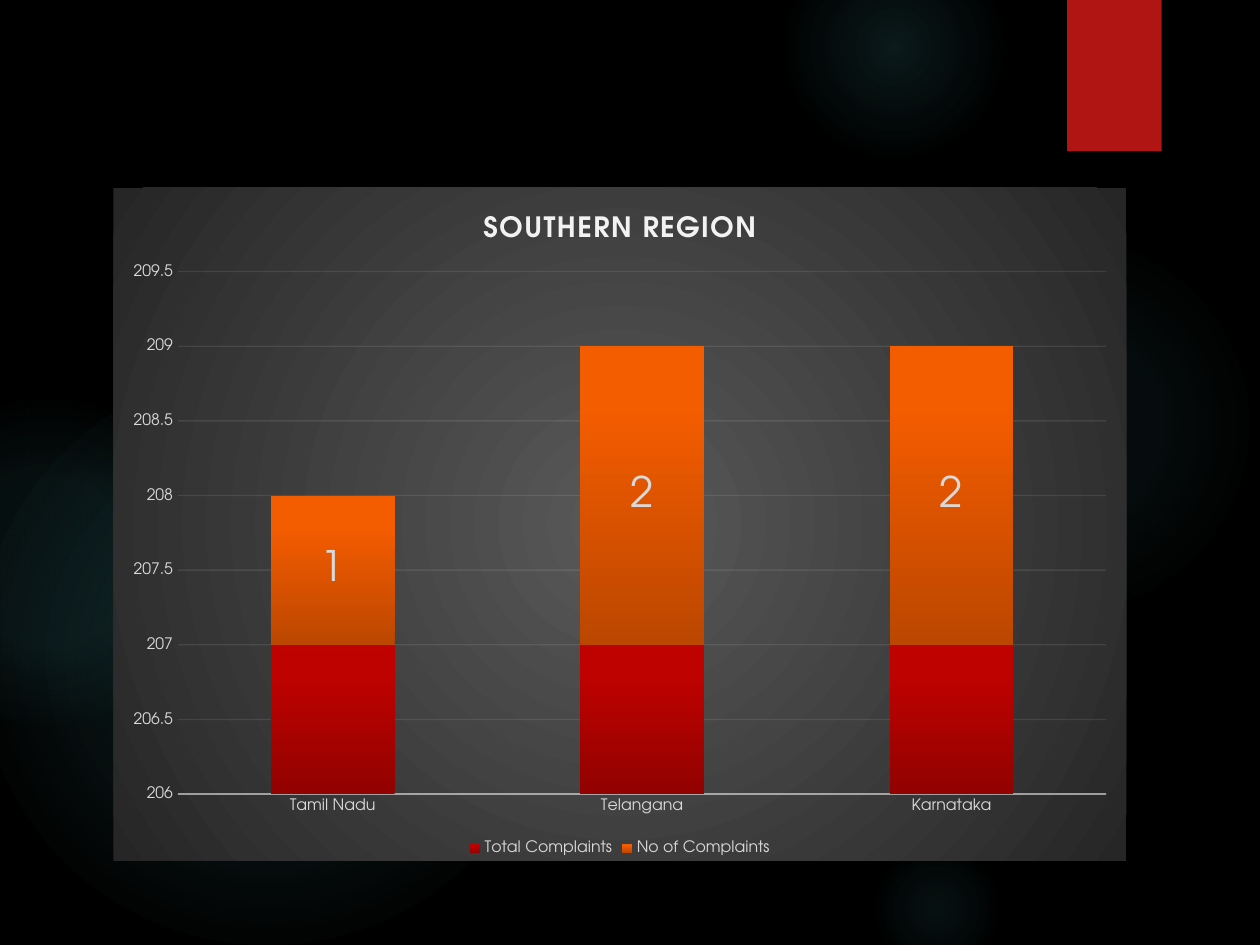
from lxml import etree
from pptx import Presentation
from pptx.chart.data import CategoryChartData
from pptx.dml.color import RGBColor
from pptx.enum.chart import XL_CHART_TYPE, XL_LABEL_POSITION, XL_LEGEND_POSITION, XL_TICK_MARK
from pptx.enum.shapes import MSO_SHAPE
from pptx.oxml.ns import qn
from pptx.util import Inches, Pt

OVAL, RECTANGLE = MSO_SHAPE.OVAL, MSO_SHAPE.RECTANGLE
STACKED = XL_CHART_TYPE.COLUMN_STACKED
BOTTOM = XL_LEGEND_POSITION.BOTTOM
CENTER = XL_LABEL_POSITION.CENTER
NO_TICK = XL_TICK_MARK.NONE

BLACK = RGBColor(0x00, 0x00, 0x00)
WHITE = RGBColor(0xFF, 0xFF, 0xFF)
TEAL = RGBColor(0x50, 0xB9, 0xC1)
RED = RGBColor(0xB0, 0x15, 0x13)
PALE = RGBColor(0xF2, 0xF2, 0xF2)
SILVER = RGBColor(0xD9, 0xD9, 0xD9)
PANEL = [(0, RGBColor(0x59, 0x59, 0x59), 100), (100, RGBColor(0x26, 0x26, 0x26), 100)]
CRIMSON = [(0, RGBColor(0x92, 0x02, 0x00), 100), (80, RGBColor(0xBD, 0x02, 0x00), 100),
           (100, RGBColor(0xBE, 0x02, 0x00), 100)]
ORANGE = [(0, RGBColor(0xBC, 0x47, 0x00), 100), (80, RGBColor(0xF4, 0x5C, 0x00), 100),
          (100, RGBColor(0xF5, 0x5C, 0x00), 100)]


def child(parent, tag, **attributes):
    return etree.SubElement(parent, qn(tag), {key: str(value) for key, value in attributes.items()})


def color(parent, rgb, opacity):
    swatch = child(parent, "a:srgbClr", val=rgb)
    if opacity < 100:
        child(swatch, "a:alpha", val=opacity * 1000)


def gradient(stops, angle=None):
    fill = etree.Element(qn("a:gradFill"), rotWithShape="1")
    stop_list = child(fill, "a:gsLst")
    for position, rgb, opacity in stops:
        color(child(stop_list, "a:gs", pos=position * 1000), rgb, opacity)
    if angle is None:
        circle = child(fill, "a:path", path="circle")
        child(circle, "a:fillToRect", l=50000, t=50000, r=50000, b=50000)
    else:
        child(fill, "a:lin", ang=angle * 60000, scaled=0)
    return fill


class Deck:
    font = "TeX Gyre Adventor"

    def __init__(self, width, height):
        self.presentation = Presentation()
        self.presentation.slide_width = Inches(width)
        self.presentation.slide_height = Inches(height)
        self.slide = self.presentation.slides.add_slide(self.presentation.slide_layouts[6])
        backdrop = self.slide.background.fill
        backdrop.solid()
        backdrop.fore_color.rgb = BLACK

    def style(self, font, size, rgb, bold=False):
        font.name, font.size, font.bold = self.font, Pt(size), bold
        font.color.rgb = rgb

    def shape(self, kind, box, rgb):
        shape = self.slide.shapes.add_shape(kind, *map(Inches, box))
        shape.shadow.inherit = False
        shape.fill.solid()
        shape.fill.fore_color.rgb = rgb
        shape.line.fill.background()
        return shape

    def glow(self, left, top, diameter, opacities, reach):
        orb = self.shape(OVAL, (left, top, diameter, diameter), TEAL)
        stops = [(position, TEAL, opacity) for position, opacity in zip((0, 36, reach), opacities)]
        solid = orb.element.spPr.find(qn("a:solidFill"))
        solid.getparent().replace(solid, gradient(stops))

    def ribbon(self, box):
        ribbon = self.shape(RECTANGLE, box, RED)
        shadow = child(ribbon.element.spPr.find(qn("a:effectLst")), "a:outerShdw",
                       blurRad=Pt(3), dist=Pt(2), dir=90 * 60000, rotWithShape=0)
        color(shadow, BLACK, 45)

    def line(self, line, width, rgb):
        line.width = Pt(width)
        line.color.rgb = rgb

    def stacked_chart(self, box, title, regions, series_values, fills, scale):
        data = CategoryChartData()
        data.categories = regions
        for name, values in series_values.items():
            data.add_series(name, values)
        chart = self.slide.shapes.add_chart(STACKED, *map(Inches, box), data).chart
        self.style(chart.font, 10, WHITE)

        panel = etree.Element(qn("c:spPr"))
        panel.append(gradient(PANEL))
        child(child(panel, "a:ln"), "a:noFill")
        chart.element.find(qn("c:chart")).addnext(panel)

        chart.has_title = True
        heading = chart.chart_title.text_frame
        heading.text = title
        run = heading.paragraphs[0].runs[0]
        self.style(run.font, 16, PALE, bold=True)
        run.font._element.set("spc", "100")
        chart.chart_title.include_in_layout = False

        chart.has_legend = True
        chart.legend.position = BOTTOM
        chart.legend.include_in_layout = False
        self.style(chart.legend.font, 9, SILVER)

        for axis in (chart.category_axis, chart.value_axis):
            axis.major_tick_mark = axis.minor_tick_mark = NO_TICK
            self.style(axis.tick_labels.font, 9, SILVER)
        self.line(chart.category_axis.format.line, 1, PALE)
        values_axis = chart.value_axis
        values_axis.minimum_scale, values_axis.maximum_scale, values_axis.major_unit = scale
        values_axis.tick_labels.number_format = "General"
        values_axis.tick_labels.number_format_is_linked = False
        values_axis.format.line.fill.background()
        self.line(values_axis.major_gridlines.format.line, 0.75, PALE)
        for part, opacity in (("c:catAx/c:spPr", 54), ("c:majorGridlines", 10)):
            for swatch in chart.element.xpath(f".//{part}//a:srgbClr"):
                child(swatch, "a:alpha", val=opacity * 1000)

        plot = chart.plots[0]
        plot.gap_width, plot.overlap = 150, 100
        plot.vary_by_categories = False
        for series, stops in zip(plot.series, fills):
            series.format.fill.solid()
            series.format.fill.fore_color.rgb = stops[-1][1]
            solid = series._element.spPr.find(qn("a:solidFill"))
            solid.getparent().replace(solid, gradient(stops, 270))
        labels = plot.series[-1].data_labels
        labels.show_value = True
        labels.position = CENTER
        self.style(labels.font, 24, SILVER)


def main():
    deck = Deck(10, 7.5)
    for glow in (
        (6.89, 1.83, 3.08, (7, 6, 0), 69),
        (6.22, -0.5, 1.75, (14, 7, 0), 73),
        (6.89, 6.67, 1.08, (9, 5, 0), 66),
        (-0.17, 2.92, 4.58, (11, 10, 0), 75),
        (-0.92, 3.17, 2.58, (8, 8, 0), 72),
    ):
        deck.glow(*glow)
    deck.ribbon((8.47, 0, 0.75, 1.2))
    deck.stacked_chart(
        (0.9, 1.49, 8.04, 5.34),
        "SOUTHERN REGION",
        ["Tamil Nadu", "Telangana", "Karnataka"],
        {"Total Complaints": (207, 207, 207), "No of Complaints": (1, 2, 2)},
        (CRIMSON, ORANGE),
        (206, 209.5, 0.5),
    )
    deck.presentation.save("out.pptx")


if __name__ == "__main__":
    main()
